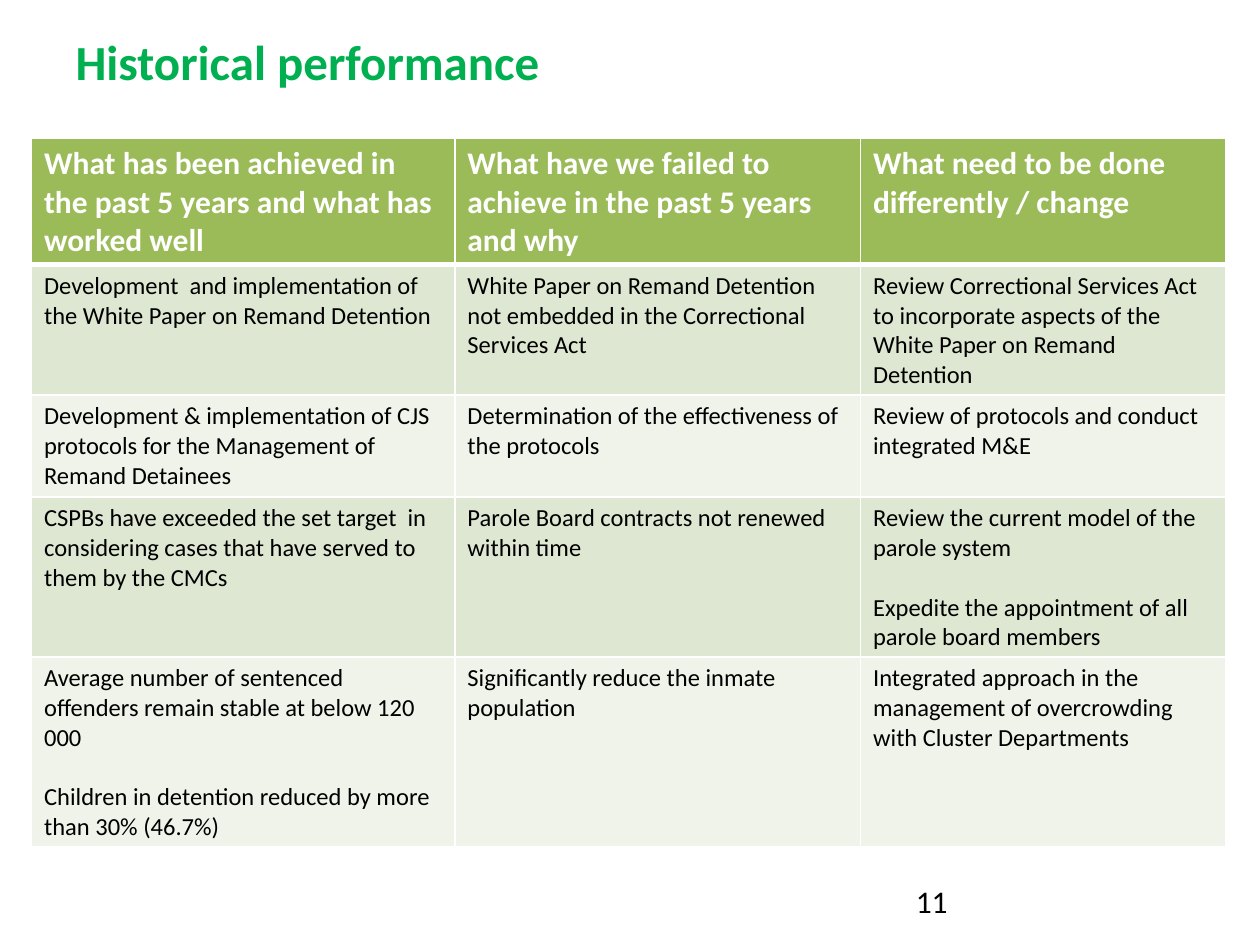
from lxml import etree
from pptx import Presentation
from pptx.dml.color import RGBColor
from pptx.enum.text import MSO_ANCHOR, MSO_AUTO_SIZE, PP_ALIGN
from pptx.oxml.ns import qn
from pptx.util import Inches, Pt

WHITE = RGBColor(0xFF, 0xFF, 0xFF)
BLACK = RGBColor(0x00, 0x00, 0x00)
TITLE_GREEN = RGBColor(0x00, 0xB0, 0x50)
HEADER_GREEN = RGBColor(0x9B, 0xBB, 0x59)
BAND_COLORS = (RGBColor(0xDE, 0xE7, 0xD1), RGBColor(0xEF, 0xF3, 0xEA))

TITLE_FORMAT = {"name": "Calibri", "size": Pt(28), "bold": True}
HEADER_FORMAT = {"name": "Calibri", "size": Pt(18), "bold": True}
BODY_FORMAT = {"name": "Calibri", "size": Pt(14), "bold": False}
NUMBER_FORMAT = {"name": "Calibri", "size": Pt(18), "bold": False}

PARAGRAPH_GAP = Pt(17)
COLUMN_WIDTHS = (3.36, 3.22, 2.9)
ROW_HEIGHTS = (0.97, 0.88, 0.81, 1.17, 1.17)

# A line break separates the paragraphs of a cell.
PERFORMANCE_ROWS = (
    (
        "What has been achieved in the past 5 years and what has worked well",
        "What have we failed to achieve in the past 5 years and why",
        "What need to be done differently / change",
    ),
    (
        "Development  and implementation of the White Paper on Remand Detention",
        "White Paper on Remand Detention not embedded in the Correctional Services Act",
        "Review Correctional Services Act to incorporate aspects of the White Paper "
        "on Remand Detention",
    ),
    (
        "Development & implementation of CJS protocols for the Management of "
        "Remand Detainees",
        "Determination of the effectiveness of the protocols",
        "Review of protocols and conduct integrated M&E",
    ),
    (
        "CSPBs have exceeded the set target  in considering cases that have served "
        "to them by the CMCs",
        "Parole Board contracts not renewed within time",
        "Review the current model of the parole system\n"
        "Expedite the appointment of all parole board members",
    ),
    (
        "Average number of sentenced offenders remain stable at below 120 000\n"
        "Children in detention reduced by more than 30% (46.7%)",
        "Significantly reduce the inmate population",
        "Integrated approach in the management of overcrowding with Cluster Departments",
    ),
)


def write_text(text_frame, text, font_format, color):
    text_frame.text = text
    for index, paragraph in enumerate(text_frame.paragraphs):
        paragraph.alignment = PP_ALIGN.LEFT
        if index:
            paragraph.space_before = PARAGRAPH_GAP
        for run in paragraph.runs:
            for attribute, value in font_format.items():
                setattr(run.font, attribute, value)
            run.font.color.rgb = color


def set_borders(cell, top, bottom):
    """Draw white cell borders, with top and bottom widths in points."""
    properties = cell._tc.get_or_add_tcPr()
    for side, width in (("L", 1), ("R", 1), ("T", top), ("B", bottom)):
        line = etree.SubElement(properties, qn(f"a:ln{side}"), w=str(Pt(width)))
        fill = etree.SubElement(line, qn("a:solidFill"))
        etree.SubElement(fill, qn("a:srgbClr"), val=str(WHITE))


def add_title(slide, text):
    title = slide.shapes.title
    title.left, title.top = Inches(0.5), Inches(0.2)
    title.width, title.height = Inches(9), Inches(0.57)
    title.text_frame.vertical_anchor = MSO_ANCHOR.TOP
    title.text_frame.auto_size = MSO_AUTO_SIZE.SHAPE_TO_FIT_TEXT
    write_text(title.text_frame, text, TITLE_FORMAT, TITLE_GREEN)


def add_performance_table(slide):
    frame = slide.shapes.add_table(
        len(ROW_HEIGHTS), len(COLUMN_WIDTHS),
        Inches(0.25), Inches(1.1), Inches(9.48), Inches(5.61),
    )
    table = frame.table
    for column, width in zip(table.columns, COLUMN_WIDTHS):
        column.width = Inches(width)
    for row, height in zip(table.rows, ROW_HEIGHTS):
        row.height = Inches(height)
    frame.height = Inches(5.61)

    for row_index, texts in enumerate(PERFORMANCE_ROWS):
        is_header = row_index == 0
        fill_color = HEADER_GREEN if is_header else BAND_COLORS[(row_index - 1) % 2]
        font_format = HEADER_FORMAT if is_header else BODY_FORMAT
        font_color = WHITE if is_header else BLACK
        for column_index, text in enumerate(texts):
            cell = table.cell(row_index, column_index)
            write_text(cell.text_frame, text, font_format, font_color)
            set_borders(cell, top=3 if row_index == 1 else 1, bottom=3 if is_header else 1)
            cell.fill.solid()
            cell.fill.fore_color.rgb = fill_color


def add_page_number(slide, text):
    box = slide.shapes.add_textbox(Inches(7.17), Inches(6.95), Inches(2.33), Inches(0.4))
    box.text_frame.word_wrap = True
    write_text(box.text_frame, text, NUMBER_FORMAT, BLACK)


def main():
    presentation = Presentation()
    presentation.slide_width = Inches(10)
    presentation.slide_height = Inches(7.5)
    slide = presentation.slides.add_slide(presentation.slide_layouts[5])
    add_title(slide, "Historical performance")
    add_performance_table(slide)
    add_page_number(slide, "11")
    presentation.save("out.pptx")


if __name__ == "__main__":
    main()
